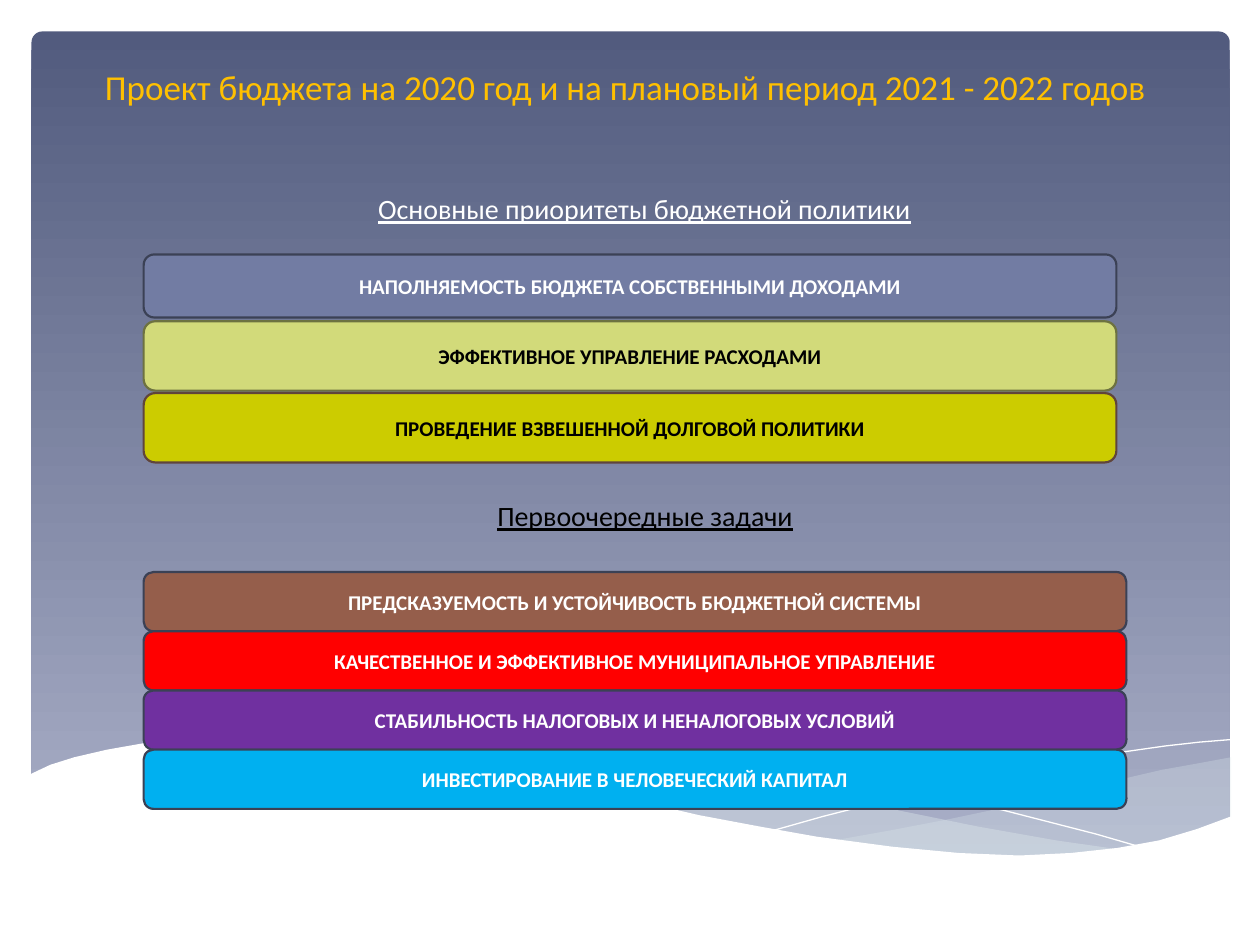
from dataclasses import dataclass
from typing import Optional

from lxml import etree
from pptx import Presentation
from pptx import util as u
from pptx.dml.color import RGBColor
from pptx.enum import shapes, text
from pptx.oxml.ns import qn


@dataclass(frozen=True)
class Theme:
    font: str = "Calibri"
    title_size: int = 20
    heading_size: int = 16
    bar_size: int = 12
    gold: str = "FFC000"
    white: str = "FFFFFF"
    black: str = "000000"
    sky_top: str = "525B7E"
    sky_bottom: str = "AAB0C8"
    mist: str = "DDE9EC"
    slate: str = "3B4155"


@dataclass(frozen=True)
class Wave:
    points: list
    fill: Optional[str] = None
    opacity: int = 100


@dataclass(frozen=True)
class Bar:
    label: str
    top: float
    width: float
    height: float
    fill: str
    ink: str = Theme.white
    outline: str = Theme.slate


THEME = Theme()
LEFT = 1.14

# Wave outlines of the backdrop, in inches, from back to front
WAVES = [
    Wave([(9.77, 6.01), (9.5, 6.06), (9.22, 6.11), (8.92, 6.18), (8.62, 6.25),
          (8.06, 6.39), (7.54, 6.5), (7.07, 6.59), (6.62, 6.67), (6.92, 6.71),
          (7.33, 6.76), (7.7, 6.79), (8.04, 6.8), (8.45, 6.79), (8.82, 6.75),
          (9.14, 6.69), (9.44, 6.61), (9.77, 6.49)], THEME.mist, 29),
    Wave([(8.94, 6.75), (8.38, 6.67), (7.76, 6.56), (7.07, 6.42), (6.3, 6.24),
          (5.84, 6.13), (5.42, 6.04), (5.02, 5.98), (4.65, 5.93), (4.2, 5.89),
          (3.8, 5.87), (3.45, 5.88), (3.14, 5.9), (2.87, 5.93), (3.23, 5.98),
          (3.63, 6.04), (4.05, 6.13), (4.5, 6.24), (5.3, 6.42), (6.02, 6.57),
          (6.66, 6.68), (7.23, 6.76), (7.74, 6.79), (8.19, 6.8), (8.59, 6.79)],
         THEME.mist, 40),
    Wave([(3.1, 5.97), (3.36, 5.93), (3.75, 5.9), (4.17, 5.89), (4.69, 5.9),
          (5.11, 5.94), (5.57, 5.98), (6.09, 6.06), (6.66, 6.15), (7.28, 6.28),
          (7.96, 6.43), (8.7, 6.62), (9.08, 6.73)]),
    Wave([(6.14, 6.59), (6.53, 6.48), (6.96, 6.37), (7.49, 6.25), (8.07, 6.12),
          (8.67, 6), (8.97, 5.96), (9.25, 5.92), (9.52, 5.89), (9.76, 5.87)]),
    Wave([(9.77, 6.48), (9.5, 6.58), (9.2, 6.67), (8.87, 6.73), (8.5, 6.77),
          (8.09, 6.79), (7.61, 6.77), (7.08, 6.72), (6.48, 6.64), (6.03, 6.56),
          (5.55, 6.47), (5.03, 6.35), (4.47, 6.22), (3.91, 6.09), (3.4, 5.99),
          (2.92, 5.92), (2.5, 5.88), (2.11, 5.86), (1.61, 5.86), (1.19, 5.89),
          (0.85, 5.95), (0.59, 6.01), (0.4, 6.07), (0.23, 6.15), (0.23, 7.31),
          (9.77, 7.31)], THEME.white),
]

PRIORITIES = [
    Bar("НАПОЛНЯЕМОСТЬ БЮДЖЕТА СОБСТВЕННЫМИ ДОХОДАМИ", 2.02, 7.72, 0.5, "727CA3"),
    Bar("ЭФФЕКТИВНОЕ УПРАВЛЕНИЕ РАСХОДАМИ", 2.55, 7.72, 0.55, "D2DA7A",
        THEME.black, "6D7240"),
    Bar("ПРОВЕДЕНИЕ ВЗВЕШЕННОЙ ДОЛГОВОЙ ПОЛИТИКИ", 3.12, 7.72, 0.55, "CCCC00",
        THEME.black, "60453B"),
]

TASK_TOP, TASK_HEIGHT = 4.54, 0.47
TASKS = [
    Bar(label, TASK_TOP + row * TASK_HEIGHT, 7.8, TASK_HEIGHT, fill)
    for row, (label, fill) in enumerate([
        ("ПРЕДСКАЗУЕМОСТЬ И УСТОЙЧИВОСТЬ БЮДЖЕТНОЙ СИСТЕМЫ", "955E4B"),
        ("КАЧЕСТВЕННОЕ И ЭФФЕКТИВНОЕ МУНИЦИПАЛЬНОЕ УПРАВЛЕНИЕ", "FF0000"),
        ("СТАБИЛЬНОСТЬ НАЛОГОВЫХ И НЕНАЛОГОВЫХ УСЛОВИЙ", "7030A0"),
        ("ИНВЕСТИРОВАНИЕ В ЧЕЛОВЕЧЕСКИЙ КАПИТАЛ", "00B0F0"),
    ])
]


def rgb(value: str) -> RGBColor:
    return RGBColor.from_string(value)


def write(box, words: str, size: int, color: str, anchor, bold: bool = False,
          underline: bool = False) -> None:
    """Put one centred run of text into a box."""
    frame = box.text_frame
    frame.word_wrap = True
    frame.auto_size = text.MSO_AUTO_SIZE.NONE
    frame.vertical_anchor = anchor
    para = frame.paragraphs[0]
    para.alignment = text.PP_ALIGN.CENTER
    para.space_before = u.Pt(0)
    span = para.add_run()
    span.text = words
    span.font.name = THEME.font
    span.font.size = u.Pt(size)
    span.font.bold = bold
    span.font.underline = underline
    span.font.color.rgb = rgb(color)


def draw_panel(page) -> None:
    panel = page.shapes.add_shape(
        shapes.MSO_SHAPE.ROUNDED_RECTANGLE,
        u.Inches(0.25), u.Inches(0.25), u.Inches(9.51), u.Inches(6.6))
    panel.adjustments[0] = 0.013
    panel.shadow.inherit = False
    panel.line.fill.background()
    panel.fill.gradient()
    panel.fill.gradient_angle = 270
    for stop, color, position in zip(panel.fill.gradient_stops,
                                     (THEME.sky_top, THEME.sky_bottom), (0, 1)):
        stop.color.rgb = rgb(color)
        stop.position = position


def draw_wave(page, wave: Wave) -> None:
    points = [(u.Inches(x), u.Inches(y)) for x, y in wave.points]
    builder = page.shapes.build_freeform(*points[0])
    builder.add_line_segments(points[1:], close=wave.fill is not None)
    shape = builder.convert_to_shape()
    shape.shadow.inherit = False
    if wave.fill is None:
        shape.fill.background()
        shape.line.color.rgb = rgb(THEME.white)
        shape.line.width = u.Pt(0)
        return
    shape.line.fill.background()
    shape.fill.solid()
    shape.fill.fore_color.rgb = rgb(wave.fill)
    if wave.opacity < 100:
        color = shape.element.spPr.find(qn("a:solidFill")).find(qn("a:srgbClr"))
        etree.SubElement(color, qn("a:alpha")).set("val", str(wave.opacity * 1000))


def place_text(holder, top: float, left: float) -> None:
    """Move a placeholder and bring it in front of the backdrop."""
    holder.left, holder.top = u.Inches(left), u.Inches(top)
    holder.width, holder.height = u.Inches(8.59), u.Inches(0.38)
    holder.element.getparent().append(holder.element)


def draw_bar(page, bar: Bar) -> None:
    shape = page.shapes.add_shape(
        shapes.MSO_SHAPE.ROUNDED_RECTANGLE, u.Inches(LEFT), u.Inches(bar.top),
        u.Inches(bar.width), u.Inches(bar.height))
    shape.shadow.inherit = False
    shape.fill.solid()
    shape.fill.fore_color.rgb = rgb(bar.fill)
    shape.line.color.rgb = rgb(bar.outline)
    shape.line.width = u.Pt(1.25)
    write(shape, bar.label, THEME.bar_size, bar.ink, text.MSO_ANCHOR.MIDDLE, bold=True)


def main() -> None:
    deck = Presentation()
    deck.slide_width, deck.slide_height = u.Inches(10), u.Inches(7.5)
    page = deck.slides.add_slide(deck.slide_layouts[0])

    # Backdrop
    draw_panel(page)
    for wave in WAVES:
        draw_wave(page, wave)

    # Title and first heading
    title, subtitle = page.shapes.title, page.placeholders[1]
    place_text(title, 0.52, 0.67)
    write(title, "Проект бюджета на 2020 год и на плановый период 2021 - 2022 годов",
          THEME.title_size, THEME.gold, text.MSO_ANCHOR.BOTTOM)
    place_text(subtitle, 1.47, 0.82)
    write(subtitle, "Основные приоритеты бюджетной политики",
          THEME.heading_size, THEME.white, text.MSO_ANCHOR.TOP, underline=True)

    # Priorities, second heading, tasks
    for bar in PRIORITIES:
        draw_bar(page, bar)
    heading = page.shapes.add_textbox(
        u.Inches(2.01), u.Inches(3.91), u.Inches(6.22), u.Inches(0.37))
    write(heading, "Первоочередные задачи", THEME.heading_size, THEME.black,
          text.MSO_ANCHOR.TOP, underline=True)
    for bar in TASKS:
        draw_bar(page, bar)

    deck.save("out.pptx")


if __name__ == "__main__":
    main()
